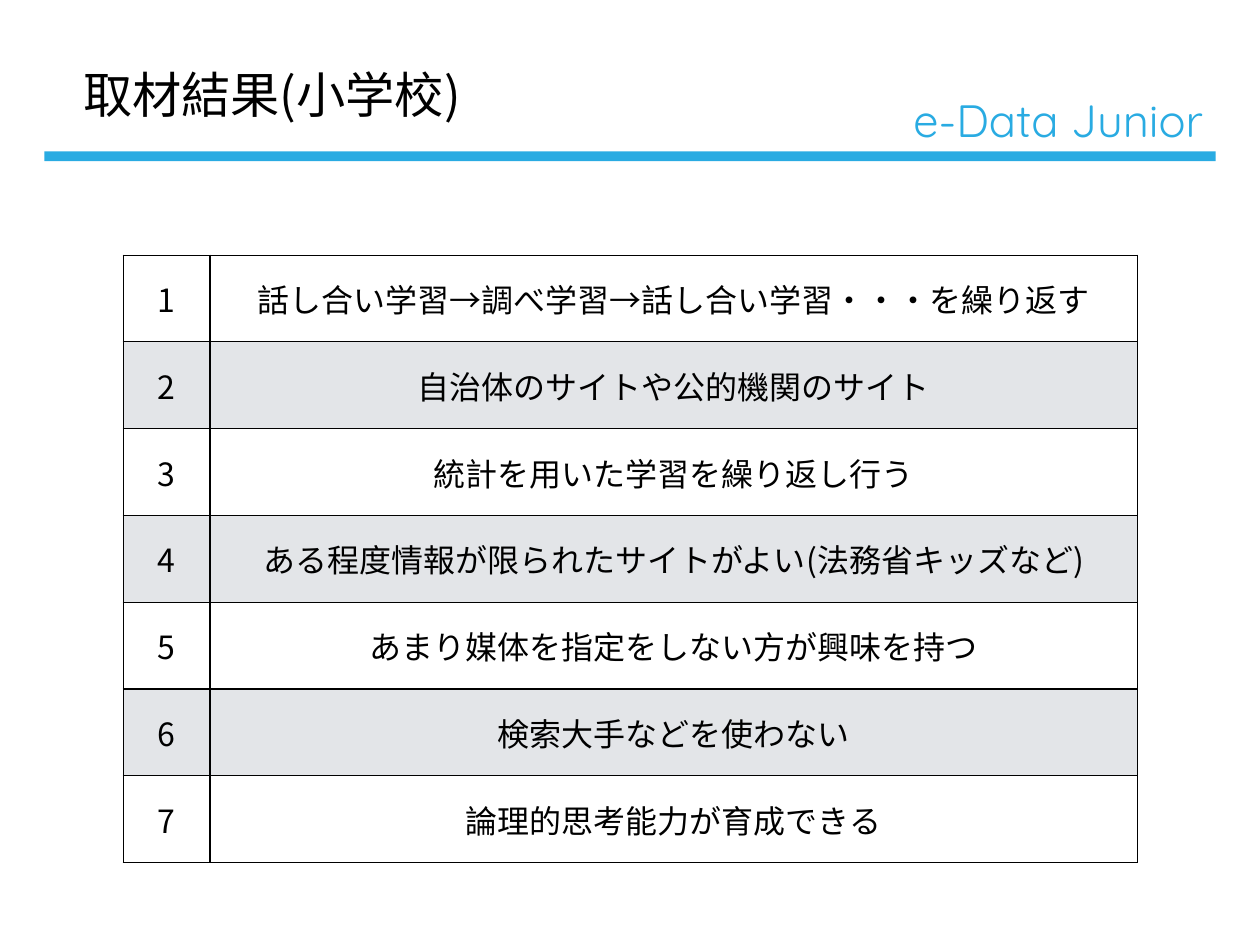
"""Build the slide of interview results from primary schools."""
from dataclasses import dataclass

from lxml import etree
from pptx import Presentation
from pptx.dml.color import RGBColor
from pptx.enum.shapes import MSO_SHAPE
from pptx.enum.text import MSO_ANCHOR, PP_ALIGN
from pptx.oxml.ns import qn
from pptx.slide import Slide
from pptx.table import _Cell
from pptx.text.text import TextFrame
from pptx.util import Inches, Pt

RECT = MSO_SHAPE.RECTANGLE
MIDDLE, BOTTOM = MSO_ANCHOR.MIDDLE, MSO_ANCHOR.BOTTOM
LEFT, CENTER = PP_ALIGN.LEFT, PP_ALIGN.CENTER
BLUE = RGBColor(0x29, 0xAB, 0xE2)
BLACK = RGBColor(0, 0, 0)
WHITE = RGBColor(0xFF, 0xFF, 0xFF)
GRAY = RGBColor(0xE3, 0xE5, 0xE8)
SANS, ROUND = "Noto Sans CJK JP", "Quicksand"
INSET = Inches(0.06)
COLS = (0.98, 10.47)
ROW = 0.98
RESULTS = (
    "話し合い学習→調べ学習→話し合い学習・・・を繰り返す",
    "自治体のサイトや公的機関のサイト",
    "統計を用いた学習を繰り返し行う",
    "ある程度情報が限られたサイトがよい(法務省キッズなど)",
    "あまり媒体を指定をしない方が興味を持つ",
    "検索大手などを使わない",
    "論理的思考能力が育成できる",
)


@dataclass
class Label:
    text: str
    left: float
    top: float
    width: float
    height: float
    size: float
    font: str
    color: RGBColor
    align: PP_ALIGN
    anchor: MSO_ANCHOR


LABELS = (
    Label("e-Data Junior", 10.17, 1.01, 3.55, 0.71, 36.8, ROUND, BLUE, CENTER, BOTTOM),
    Label("取材結果(小学校)", 0.88, 0.73, 4.41, 0.67, 40, SANS, BLACK, LEFT, MIDDLE),
)


def write(frame: TextFrame, text: str, *, size: float, font: str = SANS,
          color: RGBColor = BLACK, align: PP_ALIGN = CENTER) -> None:
    para = frame.paragraphs[0]
    para.alignment = align
    run = para.add_run()
    run.text = text
    run.font.size = Pt(size)
    run.font.name = font
    run.font.color.rgb = color
    etree.SubElement(run.font._element, qn("a:ea"), typeface=font)


def add_bar(slide: Slide) -> None:
    bar = slide.shapes.add_shape(
        RECT, Inches(0.5), Inches(1.71), Inches(13.22), Inches(0.11))
    bar.shadow.inherit = False
    bar.fill.solid()
    bar.fill.fore_color.rgb = BLUE
    bar.line.fill.background()


def add_label(slide: Slide, label: Label) -> None:
    box = slide.shapes.add_textbox(
        Inches(label.left), Inches(label.top), Inches(label.width), Inches(label.height))
    frame = box.text_frame
    frame.word_wrap = True
    frame.vertical_anchor = label.anchor
    frame.margin_left = frame.margin_right = INSET
    frame.margin_top = frame.margin_bottom = INSET
    write(frame, label.text, size=label.size, font=label.font,
          color=label.color, align=label.align)


def set_edges(cell: _Cell) -> None:
    props = cell._tc.get_or_add_tcPr()
    for side in ("lnL", "lnR", "lnT", "lnB"):
        line = etree.SubElement(props, qn(f"a:{side}"), w=str(Pt(1)))
        fill = etree.SubElement(line, qn("a:solidFill"))
        etree.SubElement(fill, qn("a:srgbClr"), val=str(BLACK))


def add_results(slide: Slide) -> None:
    count = len(RESULTS)
    table = slide.shapes.add_table(
        count, len(COLS), Inches(1.39), Inches(2.88),
        Inches(sum(COLS)), Inches(ROW * count)).table
    table.first_row = table.horz_banding = False
    for col, width in zip(table.columns, COLS):
        col.width = Inches(width)
    for i, result in enumerate(RESULTS):
        table.rows[i].height = Inches(ROW)
        for j, text in enumerate((str(i + 1), result)):
            cell = table.cell(i, j)
            cell.vertical_anchor = MIDDLE
            cell.margin_left = cell.margin_right = INSET
            cell.margin_top = cell.margin_bottom = INSET
            set_edges(cell)
            cell.fill.solid()
            cell.fill.fore_color.rgb = GRAY if i % 2 else WHITE
            write(cell.text_frame, text, size=26)


def main() -> None:
    deck = Presentation()
    deck.slide_width, deck.slide_height = Inches(14.22), Inches(10.67)
    slide = deck.slides.add_slide(deck.slide_layouts[6])
    add_bar(slide)
    for label in LABELS:
        add_label(slide, label)
    add_results(slide)
    deck.save("out.pptx")


if __name__ == "__main__":
    main()
